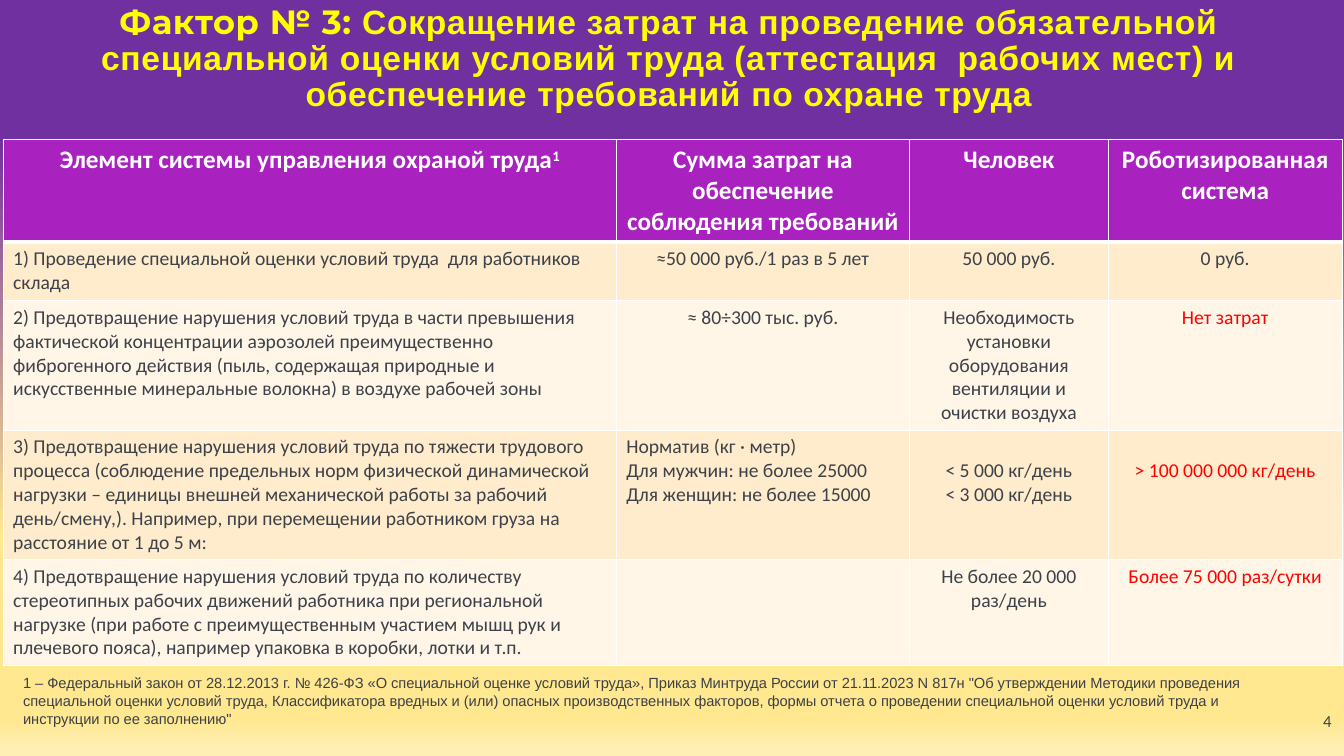
from lxml.etree import SubElement
from pptx import Presentation
from pptx.dml.color import RGBColor
from pptx.enum.text import MSO_ANCHOR as Anchor, PP_ALIGN as Align
from pptx.oxml import parse_xml
from pptx.oxml.ns import nsdecls, qn
from pptx.util import Pt

PURPLE = RGBColor(0x70, 0x30, 0xA0)
SAND = RGBColor(0xFF, 0xE8, 0x8F)
PALE_SAND = RGBColor(0xFF, 0xEF, 0xB4)
YELLOW = RGBColor(0xFF, 0xFF, 0x00)
VIOLET = RGBColor(0xA9, 0x22, 0xC0)
PEACH = RGBColor(0xFF, 0xEC, 0xCC)
CREAM = RGBColor(0xFF, 0xF6, 0xE7)
WHITE = RGBColor(0xFF, 0xFF, 0xFF)
RED = RGBColor(0xFF, 0x00, 0x00)
INK = RGBColor(0x3D, 0x41, 0x49)

BACKGROUND_STOPS = [(18, PURPLE), (71, SAND), (95, SAND), (99, PALE_SAND)]
TITLE = [
    ("Фактор № 3: ", "Montserrat"),
    ("Сокращение затрат на проведение обязательной специальной оценки условий труда "
     "(аттестация  рабочих мест) и обеспечение требований по охране труда", "Arial"),
]
COLUMN_WIDTHS = [438, 209.5, 142, 167]
ROW_HEIGHTS = [73, 42, 92.5, 92.5, 75.5]
HEADINGS = [
    "Элемент системы управления охраной труда",
    "Сумма затрат на обеспечение соблюдения требований",
    "Человек",
    "Роботизированная система",
]
ROWS = [
    ["1) Проведение специальной оценки условий труда  для работников склада",
     "≈50 000 руб./1 раз в 5 лет", "50 000 руб.", "0 руб."],
    ["2) Предотвращение нарушения условий труда в части превышения фактической "
     "концентрации аэрозолей преимущественно фиброгенного действия (пыль, содержащая "
     "природные и искусственные минеральные волокна) в воздухе рабочей зоны",
     "≈ 80÷300 тыс. руб.",
     "Необходимость установки оборудования вентиляции и очистки воздуха", "Нет затрат"],
    ["3) Предотвращение нарушения условий труда по тяжести трудового процесса "
     "(соблюдение предельных норм физической динамической нагрузки – единицы внешней "
     "механической работы за рабочий день/смену,). Например, при перемещении "
     "работником груза на расстояние от 1 до 5 м:",
     "Норматив (кг · метр)\nДля мужчин: не более 25000\nДля женщин: не более 15000",
     "< 5 000 кг/день\n< 3 000 кг/день", "> 100 000 000 кг/день"],
    ["4) Предотвращение нарушения условий труда по количеству стереотипных рабочих "
     "движений работника при региональной нагрузке (при работе с преимущественным "
     "участием мышц рук и плечевого пояса), например упаковка в коробки, лотки и т.п.",
     "", "Не более 20 000 раз/день", "Более 75 000 раз/сутки"],
]
NORM_ROW = 3
NORM_LINE = 17.1
FOOTNOTE = (
    "1 – Федеральный закон от 28.12.2013 г. № 426-ФЗ «О специальной оценке условий "
    "труда», Приказ Минтруда России от 21.11.2023 N 817н \"Об утверждении Методики "
    "проведения специальной оценки условий труда, Классификатора вредных и (или) "
    "опасных производственных факторов, формы отчета о проведении специальной оценки "
    "условий труда и инструкции по ее заполнению\""
)


def paint_background(page):
    fill = page.background.fill
    fill.gradient()
    fill.gradient_angle = 270
    stops = page.element.find(".//" + qn("a:gsLst"))
    for stop in list(stops):
        stops.remove(stop)
    for percent, color in BACKGROUND_STOPS:
        stop = SubElement(stops, qn("a:gs"), pos=str(percent * 1000))
        SubElement(stop, qn("a:srgbClr"), val=str(color))


def style(font, name, size, color, bold=False):
    font.name, font.size, font.bold = name, Pt(size), bold
    font.color.rgb = color


def add_text_box(page, left, top, width, height):
    box = page.shapes.add_textbox(Pt(left), Pt(top), Pt(width), Pt(height))
    box.text_frame.word_wrap = True
    return box.text_frame


def add_text_shadow(span):
    shadow = parse_xml(
        f'<a:effectLst {nsdecls("a")}><a:outerShdw blurRad="38100" dist="38100" '
        'dir="2700000" algn="tl"><a:srgbClr val="000000"><a:alpha val="43000"/>'
        '</a:srgbClr></a:outerShdw></a:effectLst>')
    span.font._element.find(qn("a:solidFill")).addnext(shadow)


def add_title(page, left, top, width, height):
    para = add_text_box(page, left, top, width, height).paragraphs[0]
    para.alignment, para.line_spacing = Align.CENTER, 0.9
    for text, font_name in TITLE:
        span = para.add_run()
        span.text = text
        style(span.font, font_name, 24, YELLOW, bold=True)
        span.font._element.set("spc", "50")
        add_text_shadow(span)


def set_borders(cell, bottom_width):
    """Draw white lines on all four sides of the cell."""
    props = cell._tc.get_or_add_tcPr()
    widths = {"a:lnL": 1, "a:lnR": 1, "a:lnT": 1, "a:lnB": bottom_width}
    for index, (side, width) in enumerate(widths.items()):
        line = props.makeelement(qn(side), {"w": str(Pt(width))})
        fill = SubElement(line, qn("a:solidFill"))
        SubElement(fill, qn("a:srgbClr"), val=str(WHITE))
        props.insert(index, line)


def fill_cell(cell, text, color, size, ink, align, bold=False, bottom_width=1):
    cell.fill.solid()
    cell.fill.fore_color.rgb = color
    set_borders(cell, bottom_width)
    cell.text = text
    for para in cell.text_frame.paragraphs:
        para.alignment = align
        style(para.font, "Calibri", size, ink, bold)


def add_cost_table(page, left, top):
    frame = page.shapes.add_table(len(ROW_HEIGHTS), len(COLUMN_WIDTHS), Pt(left), Pt(top),
                                  Pt(sum(COLUMN_WIDTHS)), Pt(sum(ROW_HEIGHTS)))
    table = frame.table
    for column, width in zip(table.columns, COLUMN_WIDTHS):
        column.width = Pt(width)
    for row, height in zip(table.rows, ROW_HEIGHTS):
        row.height = Pt(height)

    for column, heading in enumerate(HEADINGS):
        fill_cell(table.cell(0, column), heading, VIOLET, 18, WHITE, Align.CENTER,
                  bold=True, bottom_width=3)
    mark = table.cell(0, 0).text_frame.paragraphs[0].add_run()
    mark.text = "1"
    mark.font._element.set("baseline", "30000")

    for row, texts in enumerate(ROWS, start=1):
        for column, text in enumerate(texts):
            is_left = column == 0 or (row == NORM_ROW and column == 1)
            fill_cell(table.cell(row, column), text, PEACH if row % 2 else CREAM, 14,
                      RED if column == 3 and row > 1 else INK,
                      Align.LEFT if is_left else Align.CENTER)
    for column in (2, 3):
        table.cell(NORM_ROW, column).margin_top = Pt(3.6 + NORM_LINE)


def add_footnote(page, left, top, width, height):
    para = add_text_box(page, left, top, width, height).paragraphs[0]
    para.text = FOOTNOTE
    style(para.font, "Arial", 10.5, INK)


def add_page_number(page, left, top, width, height):
    frame = add_text_box(page, left, top, width, height)
    frame.vertical_anchor = Anchor.MIDDLE
    para = frame.paragraphs[0]
    para.text, para.alignment = "4", Align.RIGHT
    style(para.font, "Calibri", 12, INK)


def main():
    deck = Presentation()
    deck.slide_width, deck.slide_height = Pt(960), Pt(540)
    page = deck.slides.add_slide(deck.slide_layouts[6])
    paint_background(page)
    add_page_number(page, 742.3, 500.4, 216, 28.8)
    add_title(page, -0.7, 0, 957, 107.3)
    add_cost_table(page, 2.2, 99.8)
    add_footnote(page, 9.4, 478, 920, 40.3)
    deck.save("out.pptx")


if __name__ == "__main__":
    main()
